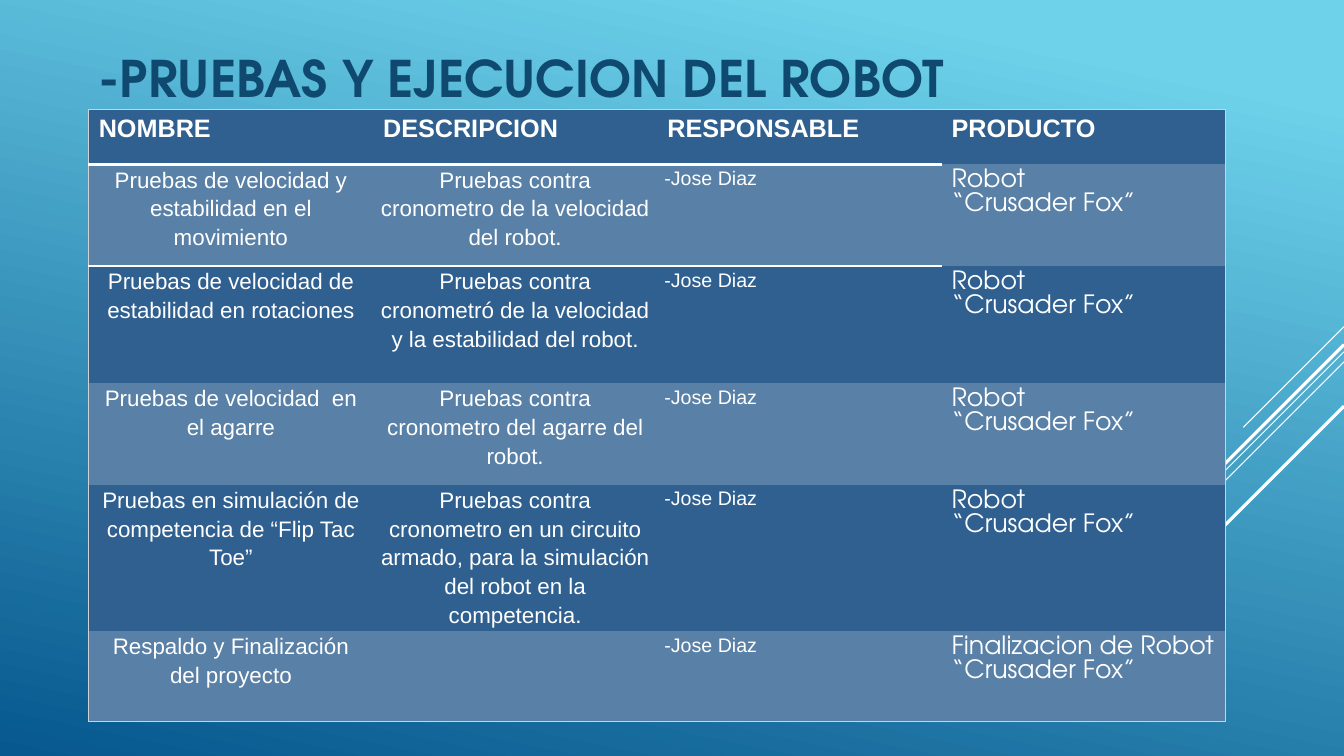
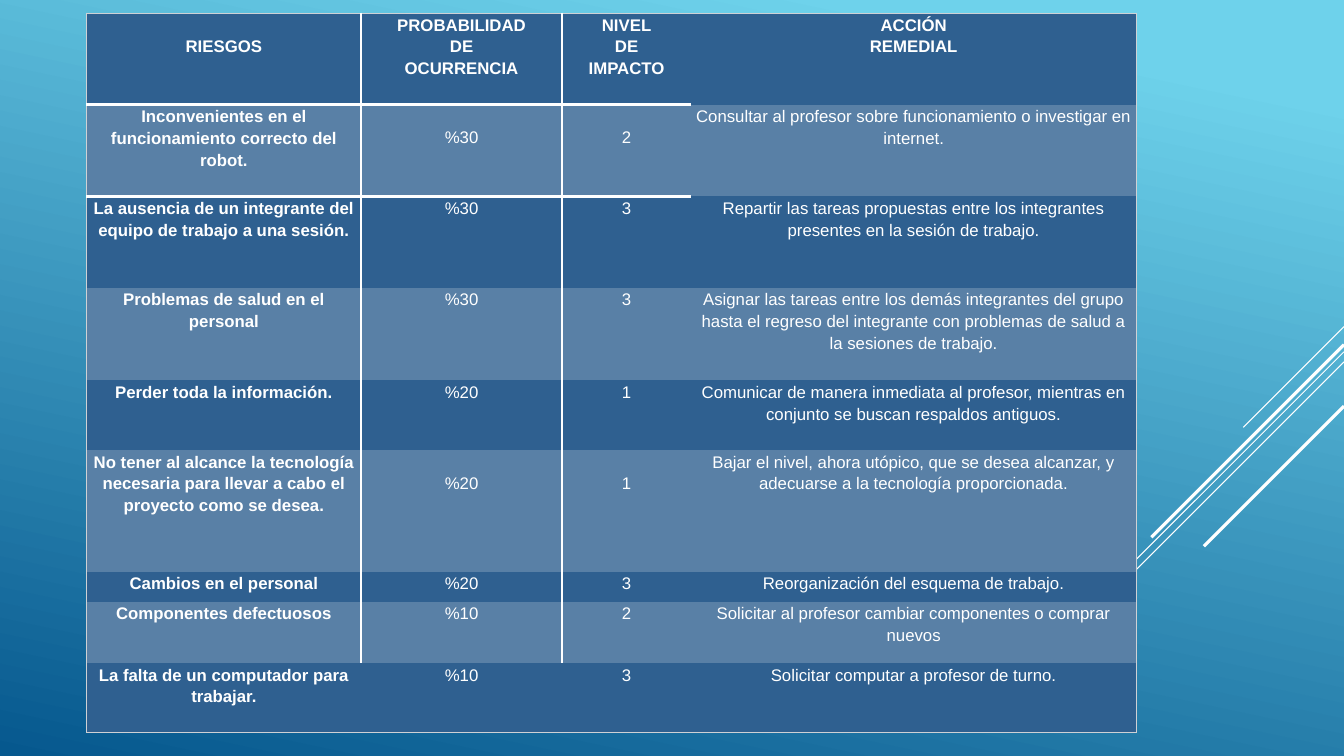
from dataclasses import dataclass

from lxml import etree
from pptx import Presentation
from pptx.dml.color import RGBColor
from pptx.enum.shapes import MSO_CONNECTOR
from pptx.enum.text import MSO_ANCHOR, PP_ALIGN
from pptx.oxml.ns import qn
from pptx.util import Inches, Pt

LEFT, CENTER = PP_ALIGN.LEFT, PP_ALIGN.CENTER
MIDDLE = MSO_ANCHOR.MIDDLE
STRAIGHT = MSO_CONNECTOR.STRAIGHT

WIDTH, HEIGHT = 13.33, 7.5
TITLE_ONLY, BLANK = 5, 6
BODY_FONT, DISPLAY_FONT = "Arial", "TeX Gyre Adventor"
WHITE, NAVY, EDGE = "FFFFFF", "0F496F", "CFD1D5"
SKY, DEEP = "6ED2EB", "06588E"
BANDS = ("2F6090", "5980A6")
NO_GRID_STYLE = "{2D5ABB26-0587-4C30-8999-92F81FD0307C}"

# Diagonals from the right edge: start height, run, line width
DIAGONALS = [(3.24, 1, 0.75), (3.49, 3.26, 0.75), (3.59, 2.07, 0.75),
             (3.42, 1.91, 2.25), (4.03, 1.39, 2.25)]

# Borders: colour, width, opacity in percent
OUTER = (EDGE, 0.75, 60)
HEADER_RULE = (WHITE, 2.25, 100)
COLUMN_RULE = (WHITE, 1.25, 100)


@dataclass
class CellStyle:
    size: float
    align: int = CENTER
    bold: bool = False
    font: str = BODY_FONT
    spacing: float = 1.15
    margins: tuple = (0.07, 0)


def rgb(color):
    return RGBColor.from_string(color)


def set_font(p, name, size, color, bold):
    p.font.name, p.font.size, p.font.bold = name, Pt(size), bold
    p.font.color.rgb = rgb(color)


def paint_background(master):
    fill = master.background.fill
    fill.gradient()
    fill.gradient_angle = 360 - 102
    for stop, position, color in zip(fill.gradient_stops, (0.1, 1), (SKY, DEEP)):
        stop.position = position
        stop.color.rgb = rgb(color)


def add_diagonals(slide, master):
    """Draw the diagonals and hand them to the master, which all slides share."""
    for i, (top, run, width) in enumerate(DIAGONALS):
        line = slide.shapes.add_connector(
            STRAIGHT, Inches(WIDTH), Inches(top),
            Inches(WIDTH - run), Inches(top + run))
        line.line.color.rgb = rgb(WHITE)
        line.line.width = Pt(width)
        etree.SubElement(line.element.spPr, qn("a:effectLst"))
        line.element.nvCxnSpPr.cNvPr.set("id", str(20 + i))
        master.shapes.element.append(line.element)


def set_title(slide, text, box):
    title = slide.shapes.title
    title.left, title.top, title.width, title.height = map(Inches, box)
    tf = title.text_frame
    tf.text, tf.vertical_anchor, tf.word_wrap = text, MIDDLE, True
    p = tf.paragraphs[0]
    p.alignment, p.line_spacing = LEFT, 0.9
    set_font(p, DISPLAY_FONT, 36, NAVY, True)


def set_borders(cell, borders):
    """Add the cell's border lines, given by side, ahead of its fill."""
    tc_pr = cell._tc.get_or_add_tcPr()
    sides = [side for side in "LRTB" if side in borders]
    for i, side in enumerate(sides):
        color, width, opacity = borders[side]
        ln = etree.Element(qn(f"a:ln{side}"), w=str(Pt(width)))
        solid = etree.SubElement(ln, qn("a:solidFill"))
        clr = etree.SubElement(solid, qn("a:srgbClr"), val=color)
        etree.SubElement(clr, qn("a:alpha"), val=str(opacity * 1000))
        tc_pr.insert(i, ln)


def borders_at(r, c, last_row, last_col, column_rule):
    borders = {}
    if c == 0:
        borders["L"] = OUTER
    if c == last_col:
        borders["R"] = OUTER
    if r == 0:
        borders["T"] = OUTER
    if r == last_row:
        borders["B"] = OUTER
    if c < last_col and r < 2:
        borders["B" if r == 0 else "T"] = HEADER_RULE
    if column_rule and c < 2 and r < last_row:
        borders["R" if c == 0 else "L"] = COLUMN_RULE
    return borders


def write_cell(cell, text, style, drop):
    """Write one paragraph per item of text, lowered by drop inches."""
    side, top = map(Inches, style.margins)
    cell.margin_left = cell.margin_right = side
    cell.margin_top, cell.margin_bottom = top + Inches(drop), top
    tf = cell.text_frame
    paragraphs = text if isinstance(text, list) else [text]
    for i, line in enumerate(paragraphs):
        p = tf.add_paragraph() if i else tf.paragraphs[0]
        p.text = line
        p.alignment, p.line_spacing = style.align, style.spacing
        set_font(p, style.font, style.size, WHITE, style.bold)


def add_banded_table(slide, box, cols, rows, cells, header, styles,
                     column_rule=False, drops=None):
    """Lay out a table whose columns and rows are shares of the box."""
    left, top, width, height = box
    table = slide.shapes.add_table(
        len(rows), len(cols), *map(Inches, box)).table
    table._tbl.tblPr.find(qn("a:tableStyleId")).text = NO_GRID_STYLE
    for column, share in zip(table.columns, cols):
        column.width = Inches(width * share / sum(cols))
    for row, share in zip(table.rows, rows):
        row.height = Inches(height * share / sum(rows))
    for r, texts in enumerate(cells):
        for c, text in enumerate(texts):
            cell = table.cell(r, c)
            cell.fill.solid()
            cell.fill.fore_color.rgb = rgb(BANDS[r % 2])
            write_cell(cell, text, styles[c] if r else header,
                       (drops or {}).get((r, c), 0))
            set_borders(cell, borders_at(r, c, len(rows) - 1, len(cols) - 1,
                                         column_rule))


def build_tests(slide):
    set_title(slide, "-PRUEBAS Y EJECUCION DEL ROBOT", (0.88, 0, 10.83, 1.62))
    tests = [
        ("Pruebas de velocidad y estabilidad en el movimiento",
         "Pruebas contra cronometro de la velocidad del robot."),
        ("Pruebas de velocidad de estabilidad en rotaciones",
         "Pruebas contra cronometró de la velocidad y la estabilidad del robot."),
        ("Pruebas de velocidad  en el agarre",
         "Pruebas contra cronometro del agarre del robot."),
        ("Pruebas en simulación de competencia de “Flip Tac Toe”",
         "Pruebas contra cronometro en un circuito armado, para la simulación "
         "del robot en la competencia."),
        ("Respaldo y Finalización del proyecto", ""),
    ]
    products = ["Robot"] * 4 + ["Finalizacion de Robot"]
    cells = [("NOMBRE", "DESCRIPCION", "RESPONSABLE", "PRODUCTO")]
    cells += [(name, description, "-Jose Diaz", f"{product}\n“Crusader Fox”")
              for (name, description), product in zip(tests, products)]
    roomy = {"align": LEFT, "spacing": 1, "margins": (0.1, 0.05)}
    centred = CellStyle(16)
    add_banded_table(
        slide, (0.88, 1.09, 11.28, 6.07), [1] * 4,
        [0.54, 1.01, 1.16, 1.01, 1.45, 0.9], cells,
        CellStyle(18, bold=True, **roomy),
        [centred, centred, CellStyle(14, LEFT),
         CellStyle(18, font=DISPLAY_FONT, **roomy)])


def build_risks(slide):
    cells = [
        ("RIESGOS", ["PROBABILIDAD", "DE", "OCURRENCIA"],
         ["NIVEL", "DE", "IMPACTO"], ["ACCIÓN", "REMEDIAL"]),
        ("Inconvenientes en el funcionamiento correcto del robot.", "%30", "2",
         "Consultar al profesor sobre funcionamiento o investigar en internet."),
        ("La ausencia de un integrante del equipo de trabajo a una sesión.",
         "%30", "3", "Repartir las tareas propuestas entre los integrantes "
         "presentes en la sesión de trabajo."),
        ("Problemas de salud en el personal", "%30", "3",
         "Asignar las tareas entre los demás integrantes del grupo hasta el "
         "regreso del integrante con problemas de salud a la sesiones de trabajo."),
        ("Perder toda la información.", "%20", "1",
         "Comunicar de manera inmediata al profesor, mientras en conjunto se "
         "buscan respaldos antiguos."),
        ("No tener al alcance la tecnología necesaria para llevar a cabo el "
         "proyecto como se desea.", "%20", "1",
         "Bajar el nivel, ahora utópico, que se desea alcanzar, y adecuarse a "
         "la tecnología proporcionada."),
        ("Cambios en el personal", "%20", "3",
         "Reorganización del esquema de trabajo."),
        ("Componentes defectuosos", "%10", "2",
         "Solicitar al profesor cambiar componentes o comprar nuevos"),
        ("La falta de un computador para trabajar.", "%10", "3",
         "Solicitar computar a profesor de turno."),
    ]
    tight = (0.04, 0)
    strong = CellStyle(12, bold=True, margins=tight)
    plain = CellStyle(12, margins=tight)
    one_line = 0.21
    lowered = [(0, 0), (1, 1), (1, 2), (5, 1), (5, 2)]
    add_banded_table(
        slide, (0.86, 0.13, 10.41, 7.14), [2.72, 1.99, 1.28, 4.41],
        [0.91, 0.91, 0.91, 0.92, 0.69, 1.21, 0.3, 0.61, 0.69], cells,
        strong, [strong, plain, plain, plain], column_rule=True,
        drops=dict.fromkeys(lowered, one_line))


def main():
    prs = Presentation()
    prs.slide_width, prs.slide_height = Inches(WIDTH), Inches(HEIGHT)
    master = prs.slide_master
    paint_background(master)
    tests = prs.slides.add_slide(prs.slide_layouts[TITLE_ONLY])
    add_diagonals(tests, master)
    build_tests(tests)
    build_risks(prs.slides.add_slide(prs.slide_layouts[BLANK]))
    prs.save("out.pptx")


if __name__ == "__main__":
    main()
